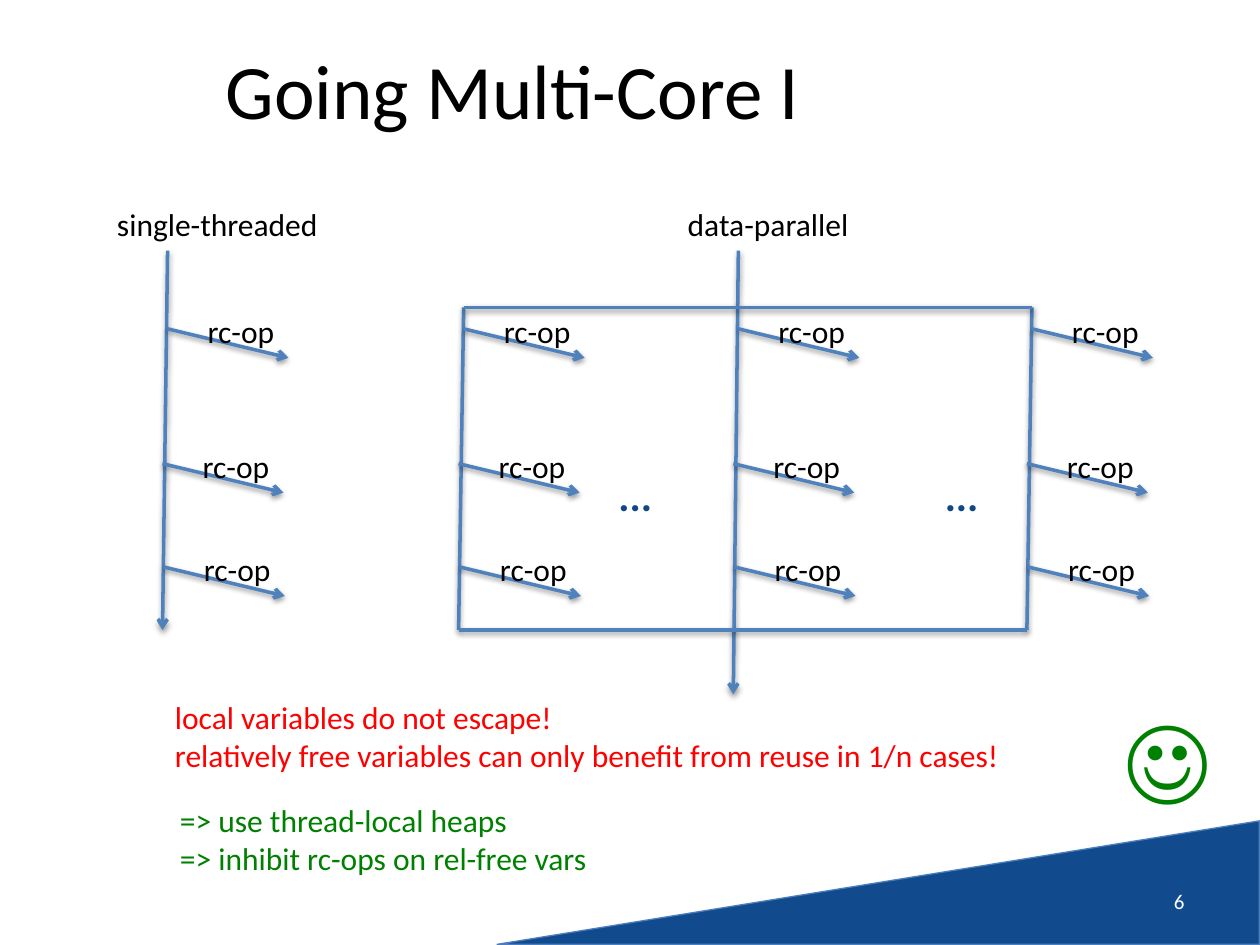
from lxml.etree import SubElement
from pptx import Presentation
from pptx.dml.color import RGBColor
from pptx.enum.shapes import MSO_CONNECTOR, MSO_SHAPE
from pptx.enum.text import MSO_ANCHOR, MSO_AUTO_SIZE, PP_ALIGN
from pptx.oxml.ns import qn
from pptx.util import Inches, Pt

BLACK = RGBColor(0, 0, 0)
WHITE = RGBColor(255, 255, 255)
RED = RGBColor(255, 0, 0)
GREEN = RGBColor(0, 128, 0)
BLUE = RGBColor(0x4F, 0x81, 0xBD)
EDGE = RGBColor(0x4B, 0x7E, 0xBC)
NAVY = RGBColor(0x11, 0x4B, 0x8E)
DOTS = RGBColor(0x10, 0x47, 0x87)

COLS, ROWS = 100, 75  # grid of the slide, ten cells to the inch
OPS = ((26.1, 0), (36.8, -0.4), (45, -0.3))  # row of each rc-op, shift from thread top
LEAN = -0.4  # a thread drifts left on its way down
TOP, END = 24.4, 50  # rows where the parallel threads fork and join


def cell(n):
    return Inches(n / 10)


def shade(shape, alpha, dist):
    """Give the shape a soft shadow straight below it."""
    props = shape.element.spPr
    effects = props.find(qn("a:effectLst"))
    if effects is None:
        effects = SubElement(props, qn("a:effectLst"))
    outer = SubElement(effects, qn("a:outerShdw"), blurRad=str(Pt(3.1)),
                       dist=str(Pt(dist)), dir="5400000", rotWithShape="0")
    color = SubElement(outer, qn("a:srgbClr"), val="000000")
    SubElement(color, qn("a:alpha"), val=str(alpha * 1000))


class Deck:
    font = "Calibri"

    def __init__(self):
        self.show = Presentation()
        self.show.slide_width, self.show.slide_height = cell(COLS), cell(ROWS)
        self.slide = self.show.slides.add_slide(self.show.slide_layouts[6])

    def text(self, words, x, y, w, h, size=18, color=BLACK, bold=False,
             align=PP_ALIGN.LEFT, fixed=False):
        """Add one paragraph per line; a fixed box wraps and centres vertically."""
        box = self.slide.shapes.add_textbox(cell(x), cell(y), cell(w), cell(h))
        frame = box.text_frame
        frame.word_wrap = fixed
        if fixed:
            frame.vertical_anchor = MSO_ANCHOR.MIDDLE
        else:
            frame.auto_size = MSO_AUTO_SIZE.SHAPE_TO_FIT_TEXT
        frame.text = words
        for para in frame.paragraphs:
            para.alignment = align
            font = para.font
            font.name, font.size, font.bold = self.font, Pt(size), bold
            font.color.rgb = color

    def line(self, x1, y1, x2, y2, arrow=False):
        link = self.slide.shapes.add_connector(
            MSO_CONNECTOR.STRAIGHT, cell(x1), cell(y1), cell(x2), cell(y2))
        link.line.color.rgb = BLUE
        link.line.width = Pt(2)
        if arrow:
            SubElement(link.element.spPr.get_or_add_ln(), qn("a:tailEnd"), type="arrow")
        shade(link, 38, 1.6)

    def wedge(self, x, y, w, h):
        shape = self.slide.shapes.add_shape(
            MSO_SHAPE.RIGHT_TRIANGLE, cell(x), cell(y), cell(w), cell(h))
        shape.rotation = 270
        shape.fill.solid()
        shape.fill.fore_color.rgb = NAVY
        shape.line.color.rgb = EDGE
        shape.line.width = Pt(0.75)
        shape.shadow.inherit = False
        shade(shape, 35, 1.8)

    def thread(self, x, top, end, arrow=False):
        """Draw a leaning thread with its three rc-op branches."""
        self.line(x, top, x + LEAN, end, arrow)
        for row, shift in OPS:
            left = x + shift
            self.line(left, row, left + 9.6, row + 2.3, True)
            self.text("rc-op", left + 2.2, row - 1.8, 7.4, 4)


def main():
    deck = Deck()
    deck.wedge(64.8, 39.8, 9.8, 60.5)
    deck.text("Going Multi-Core I", 5, 0.8, 71.4, 12.5, size=44,
              align=PP_ALIGN.CENTER, fixed=True)
    deck.text("6", 71.7, 69.5, 23.3, 4, size=12, color=WHITE,
              align=PP_ALIGN.RIGHT, fixed=True)

    deck.text("single-threaded", 8.3, 15.8, 18.1, 4)
    deck.thread(13.3, 19.9, END, arrow=True)

    first, mid, last = 36.8, 58.6, 81.9
    deck.text("data-parallel", 53.6, 15.8, 14.9, 4)
    deck.thread(first, TOP, END)
    deck.thread(mid, 19.9, 55.1, arrow=True)
    deck.thread(last, TOP, END)
    for row, shift in ((TOP, 0), (END, LEAN)):
        deck.line(first + shift, row, last + shift, row)
    for x in (48.1, 74):
        deck.text("...", x, 36.8, 4.7, 5, size=24, color=DOTS, bold=True)

    deck.text("local variables do not escape!\n"
              "relatively free variables can only benefit from reuse in 1/n cases!",
              12.9, 54.9, 68.1, 7.1, color=RED)
    deck.text("=> use thread-local heaps\n=> inhibit rc-ops on rel-free vars",
              13.3, 63.1, 34.6, 7.1, color=GREEN)
    deck.text("☺", 88.3, 54.9, 8.4, 10.1, size=54, color=GREEN, bold=True)
    deck.show.save("out.pptx")


if __name__ == "__main__":
    main()
